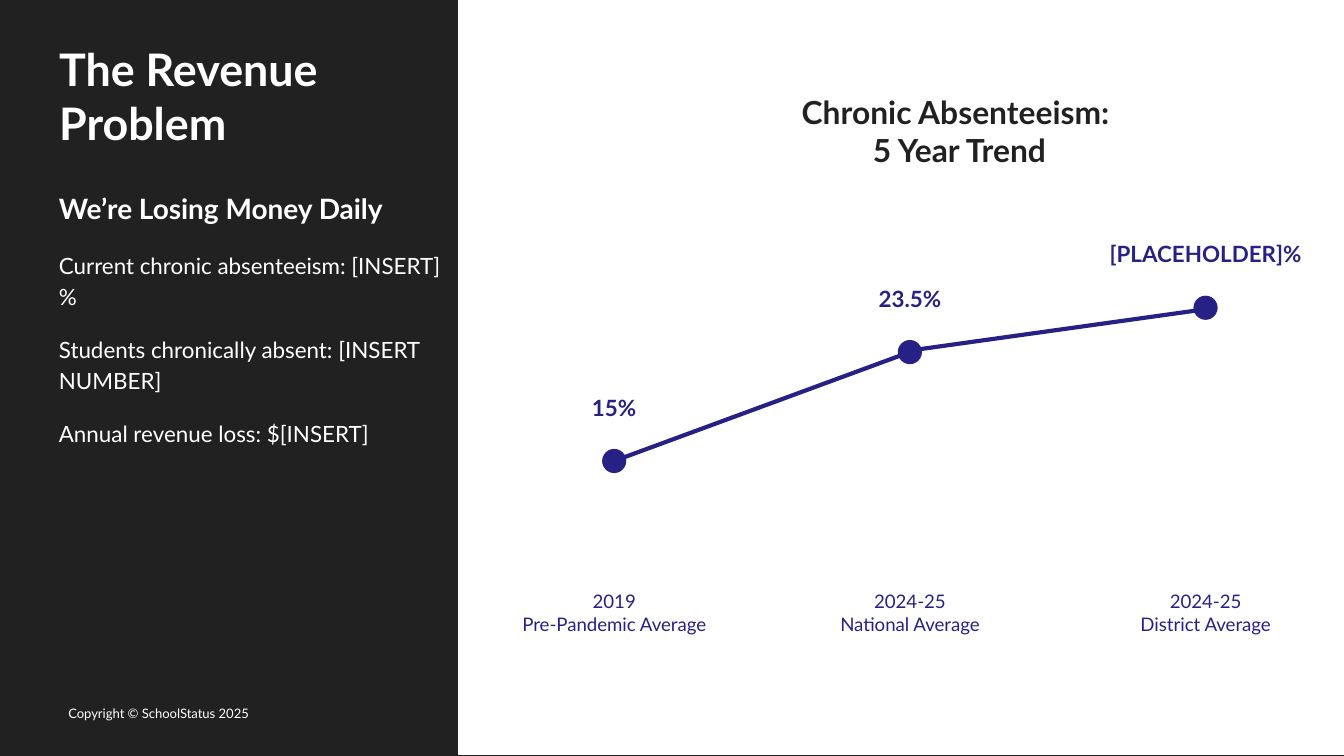
from pptx import Presentation
from pptx.dml.color import RGBColor
from pptx.enum import shapes, text
from pptx.oxml.ns import qn
from pptx.util import Inches, Pt
from lxml import etree

COLORS = {"dark": "212121", "white": "FFFFFF", "trend": "282185"}
FONT = "Lato"
FIRST_X, STEP_X = 4.57, 2.2
DOT = 0.18
OVERHANGS = [0, 0.08]

MILESTONES = [
    (3.43, "15%", 0.67, ["2019", "Pre-Pandemic Average"]),
    (2.62, "23.5%", 0.82, ["2024-25", "National Average"]),
    (2.29, "[PLACEHOLDER]%", 1.79, ["2024-25", "District Average"]),
]
LOSSES = [
    "Current chronic absenteeism: [INSERT]%",
    "Students chronically absent: [INSERT NUMBER]",
    "Annual revenue loss: $[INSERT]",
]


def rgb(name):
    return RGBColor.from_string(COLORS[name])


def set_frame(frame, anchor=text.MSO_ANCHOR.TOP):
    frame.word_wrap = True
    frame.auto_size = text.MSO_AUTO_SIZE.NONE
    frame.vertical_anchor = anchor
    frame.margin_left = frame.margin_right = Inches(0.1)
    frame.margin_top = frame.margin_bottom = Inches(0.1)


def add_run(paragraph, words, size, color, bold=False):
    run = paragraph.add_run()
    run.text = words
    run.font.name = FONT
    run.font.size = Pt(size)
    run.font.bold = bold
    run.font.color.rgb = rgb(color)


def add_text(slide, box, lines, color, align=text.PP_ALIGN.LEFT, spacing=None, before=0):
    frame = slide.shapes.add_textbox(*map(Inches, box)).text_frame
    set_frame(frame)
    for index, (words, size, bold) in enumerate(lines):
        paragraph = frame.add_paragraph() if index else frame.paragraphs[0]
        paragraph.alignment = align
        if spacing:
            paragraph.line_spacing = spacing
        if index and before:
            paragraph.space_before = Pt(before)
        add_run(paragraph, words, size, color, bold)


def add_centered(slide, center, top, width, height, lines, color):
    add_text(slide, (center - width / 2, top, width, height), lines, color,
             text.PP_ALIGN.CENTER)


def add_filled(slide, kind, box, color):
    shape = slide.shapes.add_shape(kind, *map(Inches, box))
    shape.shadow.inherit = False
    shape.fill.solid()
    shape.fill.fore_color.rgb = rgb(color)
    shape.line.fill.background()
    return shape


def add_segment(slide, start, end, overhang):
    (x1, y1), (x2, y2) = start, end
    segment = slide.shapes.add_connector(
        shapes.MSO_CONNECTOR.STRAIGHT,
        *map(Inches, (x1 - overhang, y1, x2 + overhang, y2)))
    segment.line.color.rgb = rgb("trend")
    segment.line.width = Pt(2.25)
    etree.SubElement(segment._element.spPr, qn("a:effectLst"))


def set_title(slide, words):
    title = slide.shapes.title
    title.left, title.top = Inches(0.34), Inches(0.38)
    title.width, title.height = Inches(3.07), Inches(0.83)
    set_frame(title.text_frame, text.MSO_ANCHOR.BOTTOM)
    paragraph = title.text_frame.paragraphs[0]
    paragraph.alignment = text.PP_ALIGN.LEFT
    add_run(paragraph, words, 24, "white", True)


def add_trend(slide):
    points = [(FIRST_X + STEP_X * i, row[0]) for i, row in enumerate(MILESTONES)]
    for (x, _), (_, _, _, caption) in zip(points, MILESTONES):
        add_centered(slide, x, 4.29, 1.69, 0.39,
                     [(line, 10, False) for line in caption], "trend")
    for start, end, overhang in zip(points, points[1:], OVERHANGS):
        add_segment(slide, start, end, overhang)
    for x, y in points:
        add_filled(slide, shapes.MSO_SHAPE.OVAL,
                   (x - DOT / 2, y - DOT / 2, DOT, DOT), "trend")
    for (x, y), (_, value, width, _) in zip(points, MILESTONES):
        add_centered(slide, x, y - 0.6, width, 0.39, [(value, 12, True)], "trend")


def main():
    deck = Presentation()
    deck.slide_width, deck.slide_height = Inches(10), Inches(10) * 9 // 16
    slide = deck.slides.add_slide(deck.slide_layouts[5])
    slide.background.fill.solid()
    slide.background.fill.fore_color.rgb = rgb("dark")

    add_text(slide, (0.41, 5.15, 3.23, 0.34),
             [("Copyright © SchoolStatus 2025", 7, False)], "white")
    panel = add_filled(slide, shapes.MSO_SHAPE.RECTANGLE, (3.41, -0.01, 6.59, 5.62), "white")
    panel.line.color.rgb = rgb("white")
    panel.line.width = Pt(0.75)

    set_title(slide, "The Revenue Problem")
    summary = [("We’re Losing Money Daily", 15, True)] + [(loss, 12, False) for loss in LOSSES]
    add_text(slide, (0.34, 1.29, 3.07, 3.48), summary, "white", spacing=1.15, before=12)

    add_trend(slide)
    heading = [("Chronic Absenteeism: ", 17, True), ("5 Year Trend", 17, True)]
    add_centered(slide, 7.14, 0.59, 2.87, 0.56, heading, "dark")
    deck.save("out.pptx")


if __name__ == "__main__":
    main()
